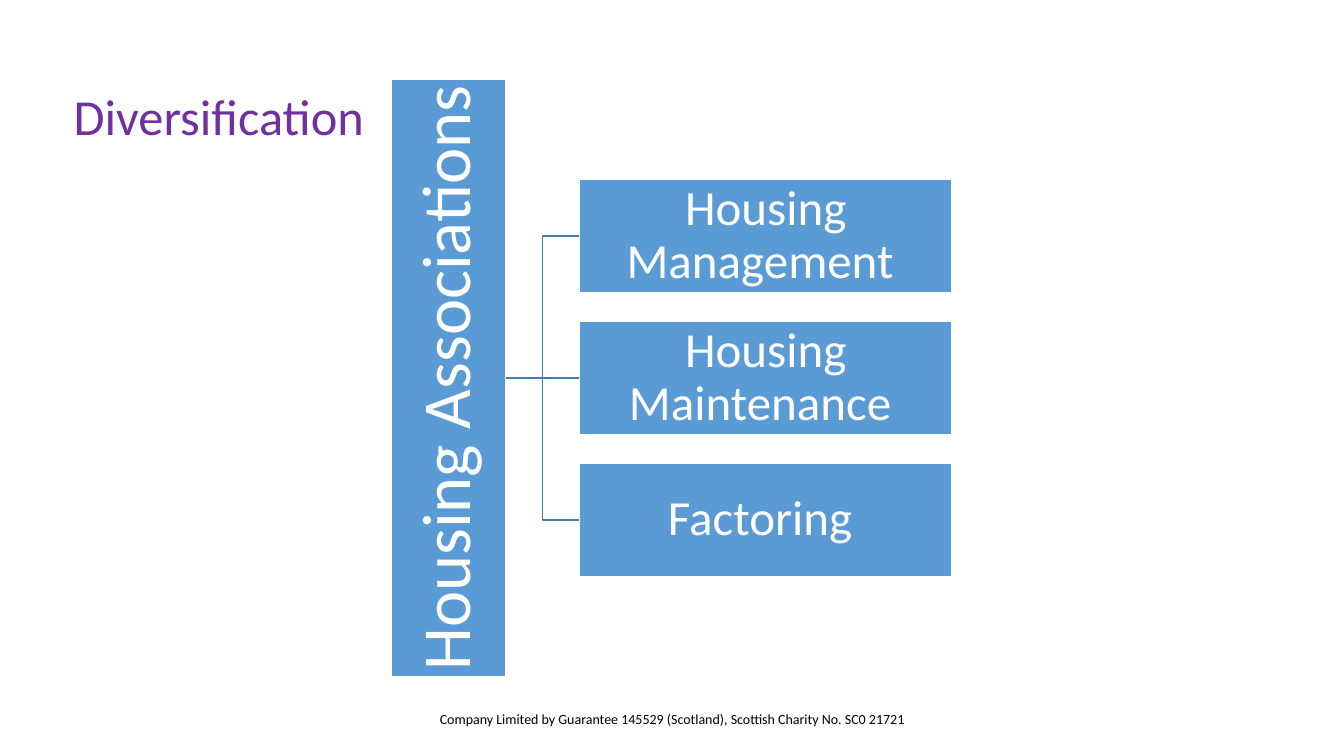
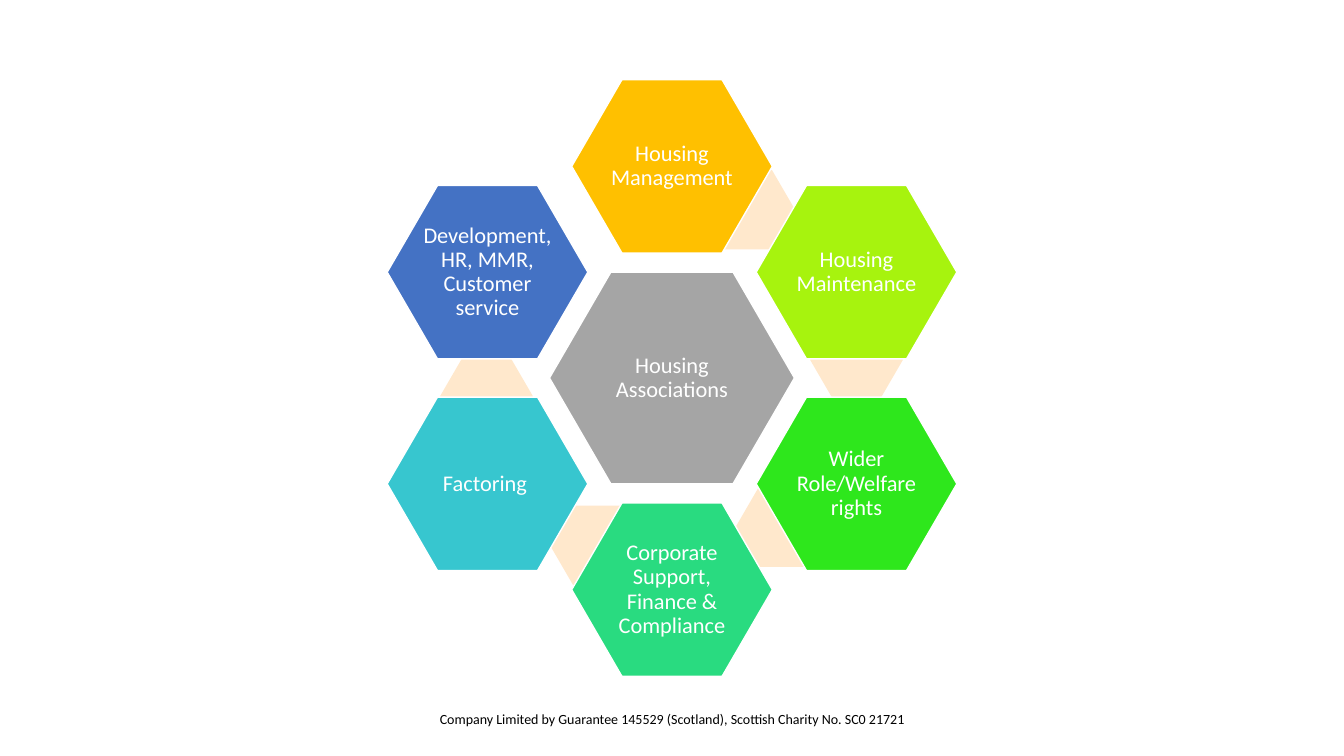
from dataclasses import dataclass

from lxml.etree import SubElement
from pptx import Presentation
from pptx.dml.color import RGBColor
from pptx.enum.shapes import MSO_CONNECTOR as LINK, MSO_SHAPE as SHAPE
from pptx.enum.text import MSO_ANCHOR as ANCHOR, MSO_AUTO_SIZE as FIT, PP_ALIGN as ALIGN
from pptx.oxml.ns import qn
from pptx.util import Inches, Pt

FONT = "Calibri"
WHITE = RGBColor(0xFF, 0xFF, 0xFF)
BLACK = RGBColor(0x00, 0x00, 0x00)
PURPLE = RGBColor(0x70, 0x30, 0xA0)
BLUE = RGBColor(0x5B, 0x9B, 0xD5)
STEEL = RGBColor(0x49, 0x7C, 0xAB)
GREY = RGBColor(0xA5, 0xA5, 0xA5)
PEACH = RGBColor(0xFF, 0xE8, 0xCC)
GOLD = RGBColor(0xFF, 0xC0, 0x00)
LIME = RGBColor(0xA7, 0xF3, 0x0E)
GREEN = RGBColor(0x2E, 0xE7, 0x1C)
MINT = RGBColor(0x29, 0xDB, 0x80)
TEAL = RGBColor(0x37, 0xC6, 0xCF)
NAVY = RGBColor(0x44, 0x72, 0xC4)

WIDE, HIGH = 13.33, 7.5
MID_X, MID_Y = WIDE / 2, HIGH / 2
FOOTER = "Company Limited by Guarantee 145529 (Scotland), Scottish Charity No. SC0 21721"

# Tree: a turned bar and one row per branch
BAR_X, BAR_LEN, THICK = 4.45, 5.93, 1.13
BRANCH_X, BRANCH_W, PITCH = 5.75, 3.69, 1.41
BRANCHES = ("Housing Management ", "Housing Maintenance ", "Factoring ")

# Honeycomb: grid steps and hexagon sizes
COL, ROW = 1.83, 1.05
CORE, CELL, BRIDGE = (2.43, 2.1), (1.99, 1.72), (0.92, 0.79)


@dataclass(frozen=True)
class Cell:
    """A hexagon, placed in grid steps from the slide's centre."""
    text: str
    col: int
    row: int
    fill: RGBColor
    size: tuple[float, float] = CELL


CELLS = (
    Cell("Housing Associations", 0, 0, GREY, CORE),
    Cell("Housing Management", 0, -2, GOLD),
    Cell("Housing Maintenance", 1, -1, LIME),
    Cell("Wider Role/Welfare rights", 1, 1, GREEN),
    Cell("Corporate Support, Finance & Compliance", 0, 2, MINT),
    Cell("Factoring ", -1, 1, TEAL),
    Cell("Development, HR, MMR, Customer service", -1, -1, NAVY),
)
# Bridge centres, in inches from the slide's centre
BRIDGES = ((0.76, -1.67), (1.83, -0.18), (1.09, 1.48), (-0.75, 1.66), (-1.84, 0.18))


def write(frame, text: str, size: float, color: RGBColor, align=ALIGN.CENTER):
    frame.word_wrap = True
    para = frame.paragraphs[0]
    para.alignment = align
    run = para.add_run()
    run.text = text
    run.font.name, run.font.size = FONT, Pt(size)
    run.font.color.rgb = color
    return para


def block(slide, kind, x: float, y: float, size: tuple[float, float], fill: RGBColor):
    """Draw a flat, unlined shape centred on x, y."""
    wide, high = size
    shape = slide.shapes.add_shape(kind, Inches(x - wide / 2), Inches(y - high / 2),
                                   Inches(wide), Inches(high))
    shape.shadow.inherit = False
    shape.fill.solid()
    shape.fill.fore_color.rgb = fill
    shape.line.fill.background()
    return shape


def label(shape, text: str, size: float, inset: float = 0.02) -> None:
    """Outline a block in white and write on it."""
    shape.line.color.rgb = WHITE
    shape.line.width = Pt(1)
    frame = shape.text_frame
    frame.margin_left = frame.margin_right = Inches(inset)
    frame.margin_top = frame.margin_bottom = Inches(inset)
    frame.vertical_anchor = ANCHOR.MIDDLE
    write(frame, text, size, WHITE).line_spacing = 0.9


def join(slide, kind, x1: float, y1: float, x2: float, y2: float) -> None:
    line = slide.shapes.add_connector(kind, Inches(x1), Inches(y1), Inches(x2), Inches(y2))
    line.line.color.rgb = STEEL
    line.line.width = Pt(1)
    SubElement(line.element.spPr, qn("a:effectLst"))


def add_title(slide, text: str) -> None:
    title = slide.shapes.title
    title.left, title.top = Inches(0.63), Inches(0.79)
    title.width, title.height = Inches(3.14), Inches(0.71)
    frame = title.text_frame
    frame.auto_size = FIT.NONE
    frame.vertical_anchor = ANCHOR.TOP
    write(frame, text, 36, PURPLE, ALIGN.LEFT)


def add_footer(deck, slide) -> None:
    """Set the footer once, on the master that all slides share."""
    box = slide.shapes.add_textbox(0, Inches(7), Inches(WIDE), Inches(0.27))
    write(box.text_frame, FOOTER, 10, BLACK)
    deck.slide_master.shapes.element.append(box.element)


def draw_tree(slide) -> None:
    rows = [MID_Y + PITCH * (i - (len(BRANCHES) - 1) / 2) for i in range(len(BRANCHES))]
    for y in rows:
        kind = LINK.STRAIGHT if y == MID_Y else LINK.ELBOW
        join(slide, kind, BAR_X + THICK / 2, MID_Y, BRANCH_X, y)
    bar = block(slide, SHAPE.RECTANGLE, BAR_X, MID_Y, (BAR_LEN, THICK), BLUE)
    bar.rotation = 270
    label(bar, "Housing Associations", 49, 0.03)
    for text, y in zip(BRANCHES, rows):
        box = block(slide, SHAPE.RECTANGLE, BRANCH_X + BRANCH_W / 2, y, (BRANCH_W, THICK), BLUE)
        label(box, text, 35)


def draw_comb(slide) -> None:
    for dx, dy in BRIDGES:
        bridge = block(slide, SHAPE.HEXAGON, MID_X + dx, MID_Y + dy, BRIDGE, PEACH)
        bridge.adjustments[0] = 0.29
    for cell in CELLS:
        x, y = MID_X + cell.col * COL, MID_Y + cell.row * ROW
        shape = block(slide, SHAPE.HEXAGON, x, y, cell.size, cell.fill)
        shape.adjustments[0] = 0.29
        label(shape, cell.text, 16)


def main() -> None:
    deck = Presentation()
    deck.slide_width, deck.slide_height = Inches(WIDE), Inches(HIGH)
    tree = deck.slides.add_slide(deck.slide_layouts[5])
    add_footer(deck, tree)
    add_title(tree, "Diversification")
    draw_tree(tree)
    draw_comb(deck.slides.add_slide(deck.slide_layouts[6]))
    deck.save("out.pptx")


if __name__ == "__main__":
    main()
